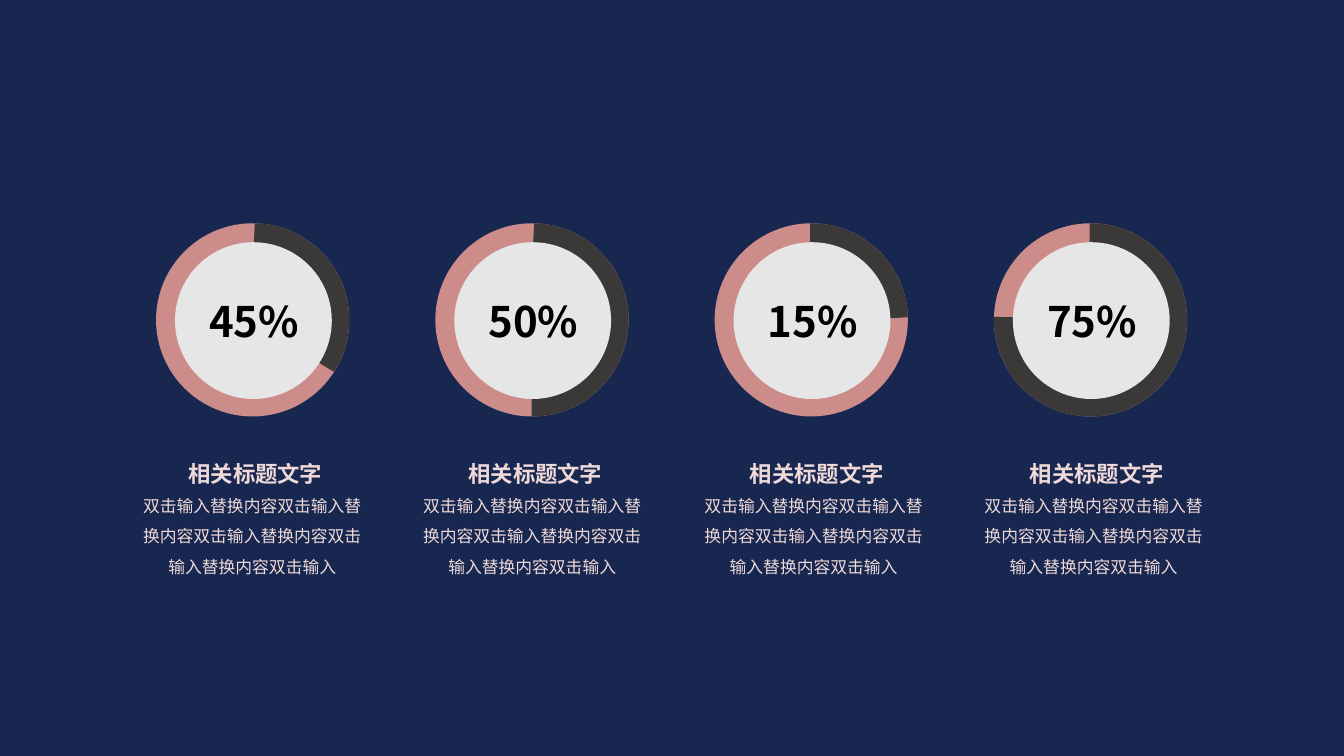
"""Build a slide with four percentage rings and their captions."""
from dataclasses import dataclass

from lxml import etree
from pptx import Presentation
from pptx.dml.color import RGBColor
from pptx.enum.shapes import MSO_SHAPE
from pptx.enum.text import MSO_AUTO_SIZE, PP_ALIGN
from pptx.oxml.ns import qn
from pptx.util import Pt

ELLIPSE, ARC = MSO_SHAPE.OVAL, MSO_SHAPE.ARC
CENTER, RIGHT = PP_ALIGN.CENTER, PP_ALIGN.RIGHT
GROW = MSO_AUTO_SIZE.SHAPE_TO_FIT_TEXT
BLANK_LAYOUT = 6

HEADING = "相关标题文字"
DESCRIPTION = "双击输入替换内容" * 4 + "双击输入"
FIRST_RING_LEFT, RING_PITCH = 124, 199.5
RING_TOP, RING_SIZE, DISC_SIZE = 172, 113, 112
ITEMS = [
    ("45%", 270.97, 32.89, 92),
    ("50%", 270.97, 90.13, 292),
    ("15%", 269.26, 358.78, 493),
    ("75%", 269.26, 181.94, 693),
]


@dataclass(frozen=True)
class Theme:
    """Colours, type sizes and line width of the slide."""

    font: str = "Noto Sans CJK SC"
    background: str = "182750"
    ring: str = "CC8D8A"
    arc: str = "3B3838"
    disc: str = "E7E6E6"
    number: str = "000000"
    caption: str = "EED9D8"
    number_size: int = 30
    heading_size: int = 16
    description_size: int = 12
    ring_width: int = 25


class SlideBuilder:
    """Draws styled elements on the current slide."""

    def __init__(self, slide, theme):
        """Keep the slide and theme and paint the background."""
        self.slide = slide
        self.theme = theme
        self.paint(slide.background.fill, theme.background)

    def paint(self, fill, color):
        """Apply a solid colour to a fill."""
        fill.solid()
        fill.fore_color.rgb = RGBColor.from_string(color)

    def round_shape(self, kind, left, top, size, fill=None, line=None):
        """Draw a round shape with an optional fill and thick line."""
        shape = self.slide.shapes.add_shape(kind, Pt(left), Pt(top), Pt(size), Pt(size))
        shape.shadow.inherit = False
        for target, color in ((shape.fill, fill), (shape.line.fill, line)):
            if color:
                self.paint(target, color)
            else:
                target.background()
        if line:
            shape.line.width = Pt(self.theme.ring_width)
        return shape

    def ring(self, left, start, end):
        """Draw a ring whose dark arc runs between two angles in degrees."""
        theme = self.theme
        self.round_shape(ELLIPSE, left, RING_TOP, RING_SIZE, theme.ring, theme.ring)
        arc = self.round_shape(ARC, left, RING_TOP, RING_SIZE, line=theme.arc)
        for index, angle in enumerate((start, end)):
            arc.adjustments[index] = angle * 0.6
        self.round_shape(ELLIPSE, left + 1, RING_TOP + 1, DISC_SIZE, theme.disc)

    def text(self, content, box, size, color, bold=False, wrap=True, align=CENTER, spacing=1.0):
        """Write one paragraph in a text box."""
        shape = self.slide.shapes.add_textbox(*map(Pt, box))
        frame = shape.text_frame
        paragraph = frame.paragraphs[0]
        run = paragraph.add_run()
        run.text = content
        formats = (
            (frame, {"word_wrap": wrap, "auto_size": GROW}),
            (paragraph, {"alignment": align, "line_spacing": spacing}),
            (run.font, {"name": self.theme.font, "size": Pt(size), "bold": bold}),
        )
        for target, values in formats:
            for name, value in values.items():
                setattr(target, name, value)
        run.font.color.rgb = RGBColor.from_string(color)
        properties = run._r.get_or_add_rPr()
        etree.SubElement(properties, qn("a:ea"), typeface=self.theme.font)

    def number(self, content, left):
        """Write the percentage inside a ring."""
        theme = self.theme
        self.text(content, (left, 207.5, 96.5, 44), theme.number_size, theme.number, bold=True)

    def caption(self, left):
        """Write the heading and description below a ring."""
        theme = self.theme
        self.text(HEADING, (left + 31.6, 319, 113.8, 32.4), theme.heading_size, theme.caption,
                  bold=True, wrap=False, align=RIGHT, spacing=1.3)
        self.text(DESCRIPTION, (left, 343.4, 176.4, 72.7), theme.description_size,
                  theme.caption, spacing=1.5)


def main():
    """Create and save the presentation."""
    presentation = Presentation()
    presentation.slide_width, presentation.slide_height = Pt(960), Pt(540)
    slide = presentation.slides.add_slide(presentation.slide_layouts[BLANK_LAYOUT])
    builder = SlideBuilder(slide, Theme())
    for index, (percentage, start, end, caption_left) in enumerate(ITEMS):
        ring_left = FIRST_RING_LEFT + index * RING_PITCH
        builder.ring(ring_left, start, end)
        builder.number(percentage, ring_left + 9.3)
        builder.caption(caption_left)
    presentation.save("out.pptx")


if __name__ == "__main__":
    main()
